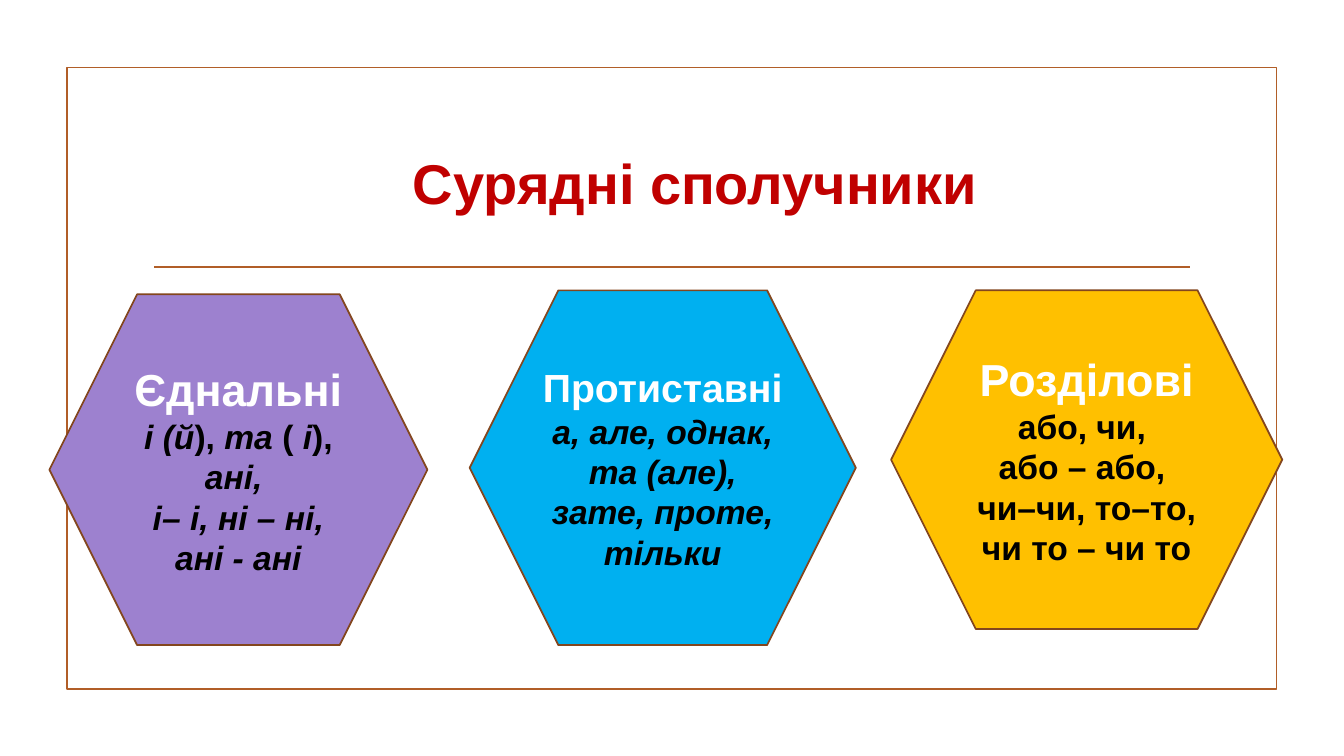
from lxml import etree
from pptx import Presentation
from pptx.dml.color import RGBColor
from pptx.enum.shapes import MSO_CONNECTOR, MSO_SHAPE
from pptx.enum.text import MSO_ANCHOR, PP_ALIGN
from pptx.oxml.ns import qn
from pptx.util import Pt

RECTANGLE, HEXAGON = MSO_SHAPE.RECTANGLE, MSO_SHAPE.HEXAGON
STRAIGHT = MSO_CONNECTOR.STRAIGHT
MIDDLE = MSO_ANCHOR.MIDDLE
CENTER = PP_ALIGN.CENTER

THEME = {
    "font": "Arial",
    "title": RGBColor(0xC0, 0x00, 0x00),
    "frame": RGBColor(0xB1, 0x5E, 0x28),
    "outline": RGBColor(0x83, 0x46, 0x1E),
    "heading": RGBColor(0xFF, 0xFF, 0xFF),
    "examples": RGBColor(0x00, 0x00, 0x00),
    "purple": RGBColor(0x9D, 0x81, 0xCF),
    "blue": RGBColor(0x00, 0xB0, 0xF0),
    "amber": RGBColor(0xFF, 0xC0, 0x00),
    "title_size": Pt(40),
    "heading_size": Pt(32),
    "long_heading_size": Pt(28),
    "examples_size": Pt(24),
    "line_width": Pt(1.25),
}

GROUPS = [
    ("Єднальні", "heading_size", "purple", (35.3, 210.2, 270, 250.6), [
        [("і (й", True), ("), ", False), ("та", True), (" ( ", False),
         ("і", True), ("), ", False), ("ані, ", True)],
        [("і– і, ні – ні,", True)],
        [("ані - ані", True)],
    ]),
    ("Протиставні", "long_heading_size", "blue", (335.5, 207.4, 275.8, 253.4), [
        [("а, але, однак,", True)],
        [("та (але), зате, проте, тільки", True)],
    ]),
    ("Розділові", "heading_size", "amber", (636.5, 207.4, 279.4, 241.9), [
        [("або, чи, ", False)],
        [("або – або, ", False)],
        [("чи–чи, то–то,", False)],
        [("чи то – чи то", False)],
    ]),
]


def add_run(paragraph, text, size, color, italic=False):
    run = paragraph.add_run()
    run.text = text
    run.font.name = THEME["font"]
    run.font.size = THEME[size]
    run.font.bold = True
    run.font.italic = italic
    run.font.color.rgb = THEME[color]


def set_line(shape, color):
    shape.line.color.rgb = THEME[color]
    shape.line.width = THEME["line_width"]


prs = Presentation()
prs.slide_width, prs.slide_height = Pt(960), Pt(540)
slide = prs.slides.add_slide(prs.slide_layouts[6])

frame = slide.shapes.add_shape(RECTANGLE, Pt(47.8), Pt(48.2), Pt(864), Pt(444.2))
frame.shadow.inherit = False
frame.fill.background()
set_line(frame, "frame")

title_rule = slide.shapes.add_connector(STRAIGHT, Pt(110.2), Pt(190.8), Pt(850.3), Pt(190.8))
set_line(title_rule, "frame")
etree.SubElement(title_rule._element.spPr, qn("a:effectLst"))

title = slide.shapes.add_textbox(Pt(270.7), Pt(72), Pt(451.4), Pt(92.2))
title.text_frame.word_wrap = True
title.text_frame.vertical_anchor = MIDDLE
title_line = title.text_frame.paragraphs[0]
title_line.alignment = CENTER
title_line.line_spacing = 1.5
add_run(title_line, "Сурядні сполучники", "title_size", "title")

for heading, heading_size, fill, bounds, examples in GROUPS:
    group = slide.shapes.add_shape(HEXAGON, *map(Pt, bounds))
    group.shadow.inherit = False
    group.fill.solid()
    group.fill.fore_color.rgb = THEME[fill]
    set_line(group, "outline")
    content = group.text_frame
    content.word_wrap = True
    content.vertical_anchor = MIDDLE
    heading_line = content.paragraphs[0]
    heading_line.alignment = CENTER
    add_run(heading_line, heading, heading_size, "heading")
    for example in examples:
        example_line = content.add_paragraph()
        example_line.alignment = CENTER
        for text, italic in example:
            add_run(example_line, text, "examples_size", "examples", italic)

prs.save("out.pptx")
